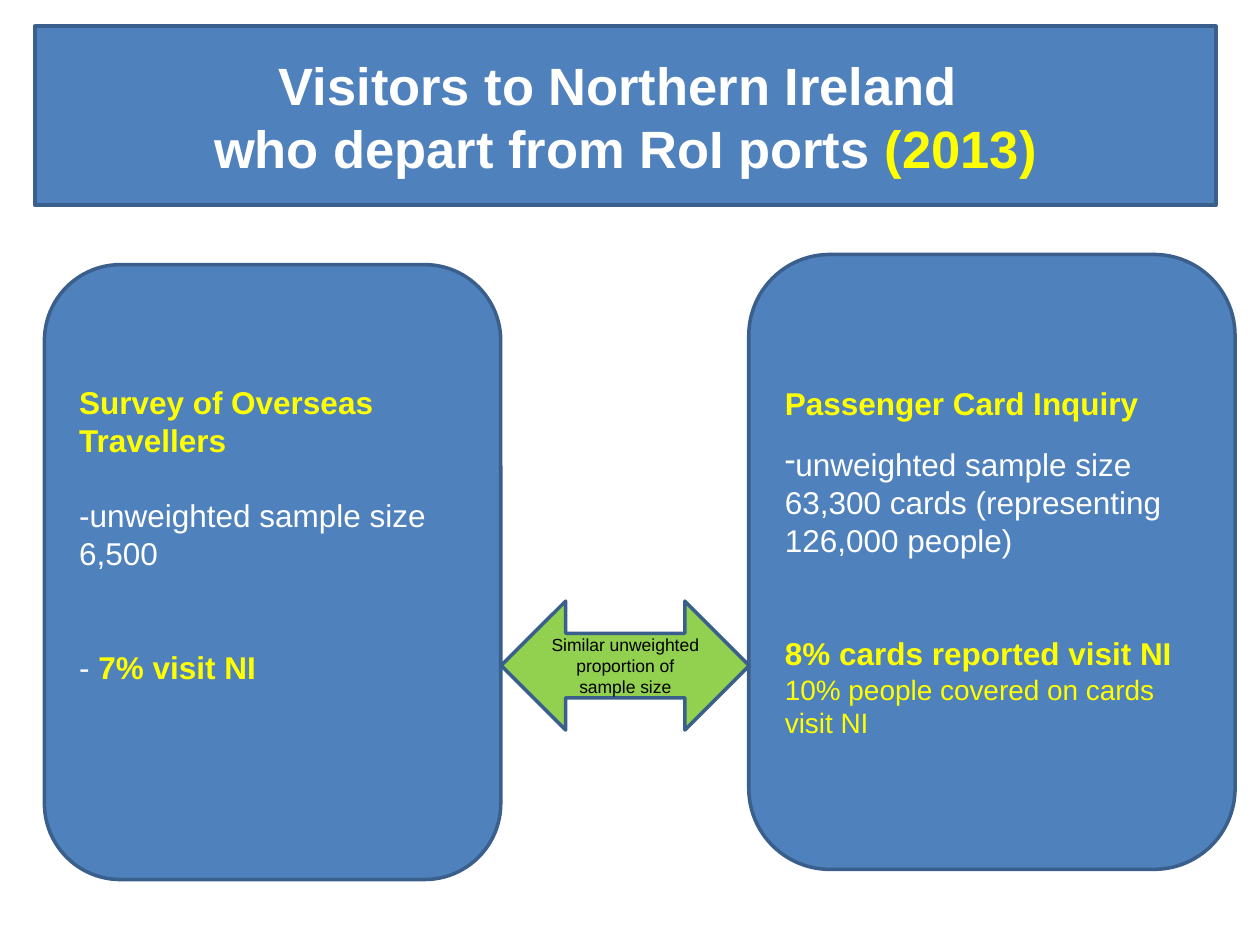
from lxml import etree
from pptx import Presentation
from pptx import util as u
from pptx.dml.color import RGBColor
from pptx.enum import shapes, text
from pptx.oxml import ns

COLOURS = {
    "blue": "4F81BD",
    "outline": "3A5F8C",
    "green": "92D050",
    "white": "FFFFFF",
    "yellow": "FFFF00",
    "black": "000000",
}
BLANK_LINE = 21.6


def colour(name):
    return RGBColor.from_string(COLOURS[name])


def add_box(page, kind, bounds, fill, bottom_inset=3.6):
    box = page.shapes.add_shape(kind, *(u.Pt(value) for value in bounds))
    box.shadow.inherit = False
    box.fill.solid()
    box.fill.fore_color.rgb = colour(fill)
    box.line.color.rgb = colour("outline")
    box.line.width = u.Pt(2)
    frame = box.text_frame
    frame.word_wrap = True
    frame.vertical_anchor = text.MSO_ANCHOR.MIDDLE
    frame.margin_bottom = u.Pt(bottom_inset)
    return box


def add_dash_bullet(para):
    properties = para._p.get_or_add_pPr()
    properties.set("marL", "0")
    properties.set("indent", "0")
    etree.SubElement(properties, ns.qn("a:buFontTx"))
    etree.SubElement(properties, ns.qn("a:buChar")).set("char", "-")


def add_span(para, wording, size, tint, bold=False):
    span = para.add_run()
    span.text = wording
    formats = {"name": "Arial", "size": u.Pt(size), "bold": bold}
    for key, value in formats.items():
        setattr(span.font, key, value)
    span.font.color.rgb = colour(tint)


def write_paragraphs(box, paragraphs, align):
    frame = box.text_frame
    for index, (gap, bullet, spans) in enumerate(paragraphs):
        para = frame.add_paragraph() if index else frame.paragraphs[0]
        formats = {"alignment": align, "space_before": u.Pt(gap)}
        for key, value in formats.items():
            setattr(para, key, value)
        if bullet:
            add_dash_bullet(para)
        for span in spans:
            add_span(para, *span)


def main():
    deck = Presentation()
    deck.slide_width, deck.slide_height = u.Pt(720), u.Pt(540)
    page = deck.slides.add_slide(deck.slide_layouts[6])
    kinds = shapes.MSO_SHAPE
    left, centre = text.PP_ALIGN.LEFT, text.PP_ALIGN.CENTER

    title = add_box(page, kinds.RECTANGLE, (20, 15, 674.75, 102.25), "blue")
    write_paragraphs(title, [
        (0, False, [("Visitors to Northern Ireland ", 30, "white", True)]),
        (0, False, [("who depart from RoI ports ", 30, "white", True),
                    ("(2013)", 30, "yellow", True)]),
    ], centre)

    survey = add_box(page, kinds.ROUNDED_RECTANGLE,
                     (25.4, 151.2, 260.8, 351.4), "blue",
                     3.6 + 2 * BLANK_LINE)
    write_paragraphs(survey, [
        (0, False, [("Survey of Overseas Travellers", 18, "yellow", True)]),
        (BLANK_LINE, False, [("-unweighted sample size 6,500", 18, "white")]),
        (2 * BLANK_LINE, False, [("- ", 18, "white"),
                                 ("7% visit NI", 18, "yellow", True)]),
    ], left)

    cards = add_box(page, kinds.ROUNDED_RECTANGLE,
                    (427.9, 145.4, 277.9, 351.4), "blue")
    write_paragraphs(cards, [
        (0, False, [("Passenger Card Inquiry", 18, "yellow", True)]),
        (13.2, True, [("unweighted sample size 63,300 cards "
                       "(representing 126,000 people)", 18, "white")]),
        (2 * BLANK_LINE, False,
         [("8% cards reported visit NI", 18, "yellow", True)]),
        (0, False, [("10% people covered on cards visit NI", 16, "yellow")]),
    ], left)

    arrow = add_box(page, kinds.LEFT_RIGHT_ARROW,
                    (286.4, 343.5, 141.8, 73.7), "green")
    write_paragraphs(arrow, [
        (0, False, [("Similar unweighted proportion of sample size",
                     10, "black")]),
    ], centre)

    deck.save("out.pptx")


if __name__ == "__main__":
    main()
